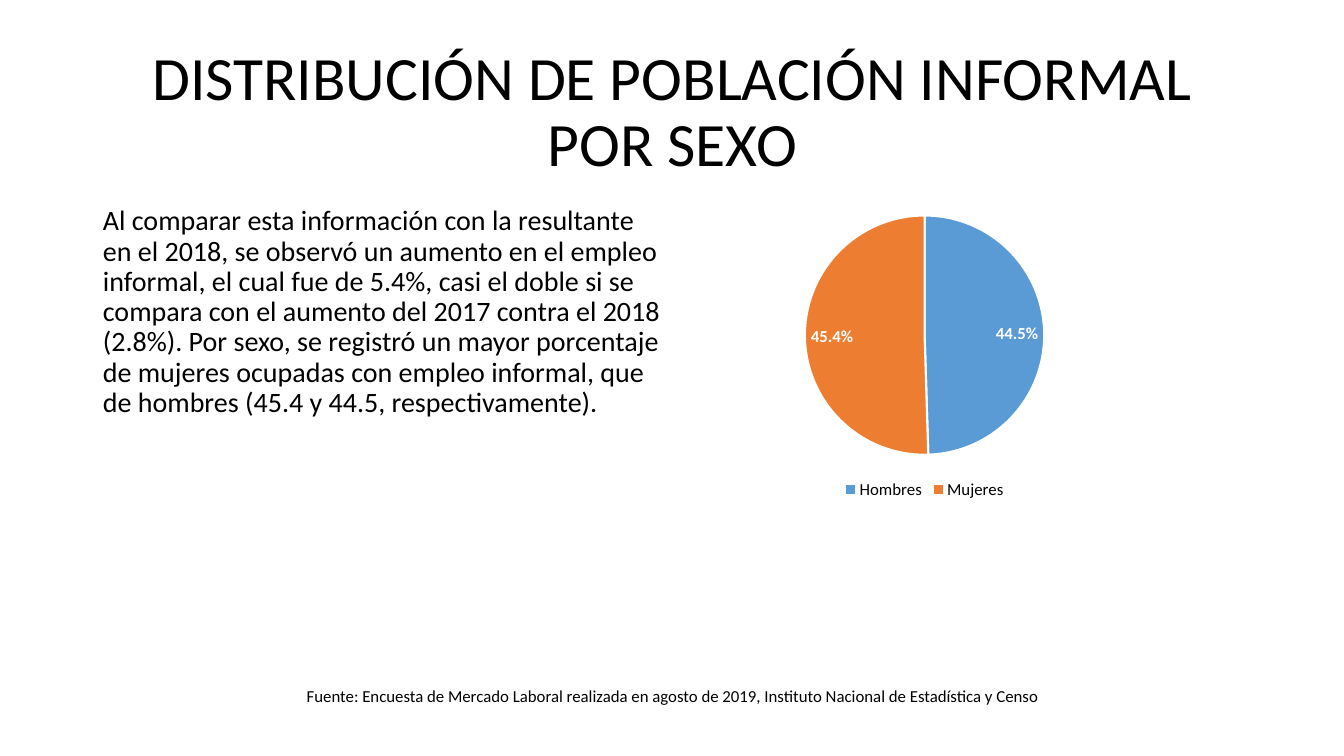
from pptx import Presentation
from pptx.chart.data import CategoryChartData
from pptx.dml.color import RGBColor
from pptx.enum import chart as ch, text as tx
from pptx.oxml import parse_xml
from pptx.oxml.ns import nsdecls
from pptx.util import Inches, Pt

FONT = "Calibri"
COLORS = {"text": "000000", "light": "FFFFFF", "Hombres": "5B9BD5", "Mujeres": "ED7D31"}
SHARES = {"Hombres": 0.445, "Mujeres": 0.454}

TITLE = "DISTRIBUCIÓN DE POBLACIÓN INFORMAL POR SEXO"
COMMENTARY = (
    "Al comparar esta información con la resultante en el 2018, se observó un aumento "
    "en el empleo informal, el cual fue de 5.4%, casi el doble si se compara con el "
    "aumento del 2017 contra el 2018 (2.8%). Por sexo, se registró un mayor porcentaje "
    "de mujeres ocupadas con empleo informal, que de hombres (45.4 y 44.5, respectivamente)."
)
SOURCE = (
    "Fuente: Encuesta de Mercado Laboral realizada en agosto de 2019, "
    "Instituto Nacional de Estadística y Censo"
)


def rgb(name):
    return RGBColor.from_string(COLORS[name])


def style_font(font, size, color="text", bold=False):
    font.name, font.size, font.bold = FONT, Pt(size), bold
    font.color.rgb = rgb(color)


def place(part, box):
    part.left, part.top, part.width, part.height = (Inches(length) for length in box)


def write(part, words, size, align, anchor=tx.MSO_ANCHOR.TOP):
    frame = part.text_frame
    frame.word_wrap = True
    frame.auto_size = tx.MSO_AUTO_SIZE.NONE
    frame.vertical_anchor = anchor
    paragraph = frame.paragraphs[0]
    paragraph.alignment = align
    run = paragraph.add_run()
    run.text = words
    style_font(run.font, size)
    return paragraph


# Heading
def add_title(slide, box):
    title = slide.shapes.title
    place(title, box)
    paragraph = write(title, TITLE, 44, tx.PP_ALIGN.CENTER, tx.MSO_ANCHOR.MIDDLE)
    paragraph.line_spacing = 0.9


# Commentary on the left, without a bullet
def add_commentary(slide, box):
    commentary = slide.placeholders[1]
    place(commentary, box)
    paragraph = write(commentary, COMMENTARY, 20, tx.PP_ALIGN.LEFT)
    paragraph.line_spacing = 0.9
    paragraph.space_before = Pt(10)
    properties = paragraph._p.get_or_add_pPr()
    properties.set("marL", "0")
    properties.set("indent", "0")
    properties.append(parse_xml(f"<a:buNone {nsdecls('a')}/>"))


# Pie of informal employment by sex
def add_pie(slide, box):
    data = CategoryChartData(number_format="0.0%")
    data.categories = list(SHARES)
    data.add_series("Series 1", list(SHARES.values()))
    pie = slide.shapes.add_chart(
        ch.XL_CHART_TYPE.PIE, *(Inches(length) for length in box), data
    ).chart
    style_font(pie.font, 10)
    pie.has_title = False
    pie.has_legend = True
    pie.legend.position = ch.XL_LEGEND_POSITION.BOTTOM
    pie.legend.include_in_layout = False
    style_font(pie.legend.font, 12)

    plot = pie.plots[0]
    plot.vary_by_categories = True
    for index, sex in enumerate(SHARES):
        slice_format = plot.series[0].points[index].format
        slice_format.fill.solid()
        slice_format.fill.fore_color.rgb = rgb(sex)
        slice_format.line.color.rgb = rgb("light")
        slice_format.line.width = Pt(1.5)

    labels = plot.series[0].data_labels
    labels.show_value = True
    labels.show_percentage = False
    labels.number_format = "0.0%"
    labels.number_format_is_linked = False
    labels.position = ch.XL_LABEL_POSITION.INSIDE_END
    style_font(labels.font, 12, "light", bold=True)


# Source line at the foot
def add_source(slide, box):
    source = slide.shapes.add_textbox(*(Inches(length) for length in box))
    write(source, SOURCE, 12, tx.PP_ALIGN.CENTER)


def main():
    deck = Presentation()
    deck.slide_width, deck.slide_height = Inches(13.33), Inches(7.5)
    slide = deck.slides.add_slide(deck.slide_layouts[1])
    add_title(slide, (0.92, 0.4, 11.5, 1.45))
    add_source(slide, (2.93, 6.75, 7.49, 0.3))
    add_commentary(slide, (0.92, 2, 5.77, 4.76))
    add_pie(slide, (6.67, 2, 5, 3))
    deck.save("out.pptx")


if __name__ == "__main__":
    main()
